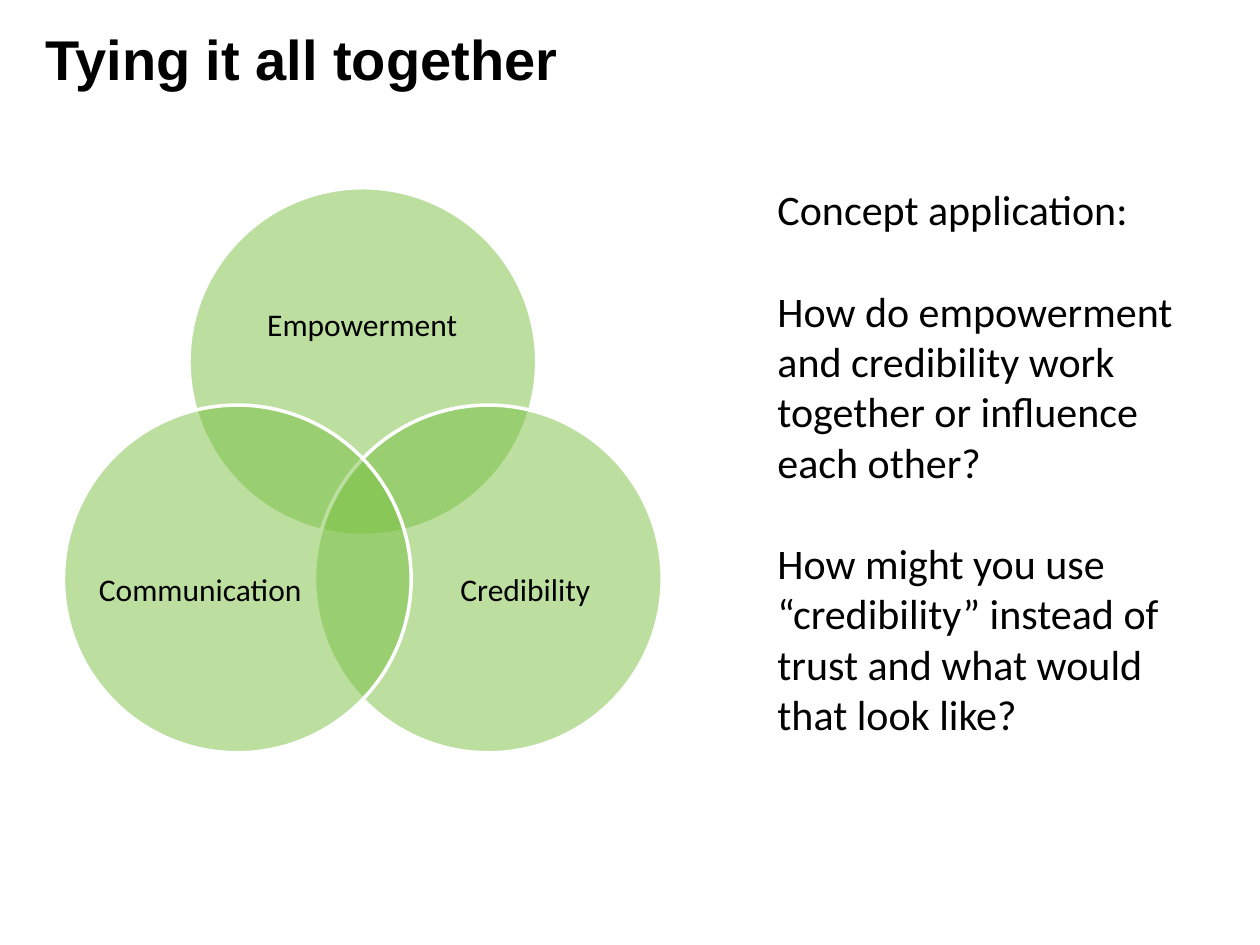
from dataclasses import dataclass
from math import cos, radians, sin

from lxml.etree import SubElement
from pptx import Presentation
from pptx.dml.color import RGBColor
from pptx.enum.shapes import MSO_SHAPE as Shape
from pptx.enum.text import MSO_ANCHOR as Anchor, MSO_AUTO_SIZE as AutoSize, PP_ALIGN as Align
from pptx.oxml.ns import qn
from pptx.util import Inches, Pt


@dataclass(frozen=True)
class Theme:
    ink: str = "000000"
    circle: str = "7AC143"
    outline: str = "FFFFFF"
    opacity: int = 50
    heading_font: str = "Arial"
    body_font: str = "Calibri"
    title_size: int = 32
    body_size: int = 24
    label_size: int = 18


def write(para, text, *, font, size, color, bold=False, align=Align.LEFT, spacing=1.0, before=0):
    para.alignment = align
    para.line_spacing = spacing
    para.space_before = Pt(before)
    span = para.add_run()
    span.text = text
    span.font.name, span.font.size, span.font.bold = font, Pt(size), bold
    span.font.color.rgb = RGBColor.from_string(color)


class SlideBuilder:
    def __init__(self, slide, theme):
        self.slide = slide
        self.theme = theme

    def title(self, text, left, top, width, height):
        box = self.slide.shapes.title
        box.left, box.top, box.width, box.height = map(Inches, (left, top, width, height))
        frame = box.text_frame
        frame.auto_size = AutoSize.NONE
        frame.vertical_anchor = Anchor.MIDDLE
        write(frame.paragraphs[0], text, font=self.theme.heading_font,
              size=self.theme.title_size, color=self.theme.ink, bold=True)

    def circle(self, group, center_x, center_y, diameter):
        radius = diameter / 2
        disc = group.shapes.add_shape(Shape.OVAL, Inches(center_x - radius), Inches(center_y - radius),
                                      Inches(diameter), Inches(diameter))
        disc.shadow.inherit = False
        disc.fill.solid()
        disc.fill.fore_color.rgb = RGBColor.from_string(self.theme.circle)
        color = disc.fill._xPr.find(".//" + qn("a:srgbClr"))
        SubElement(color, qn("a:alpha"), val=str(self.theme.opacity * 1000))
        disc.line.color.rgb = RGBColor.from_string(self.theme.outline)
        disc.line.width = Pt(2)

    def label(self, group, text, left, top, width, height):
        box = group.shapes.add_textbox(*map(Inches, (left, top, width, height)))
        frame = box.text_frame
        frame.word_wrap = True
        frame.vertical_anchor = Anchor.MIDDLE
        frame.margin_left = frame.margin_right = frame.margin_top = frame.margin_bottom = 0
        write(frame.paragraphs[0], text, font=self.theme.body_font, size=self.theme.label_size,
              color=self.theme.ink, align=Align.CENTER, spacing=0.9)

    def venn(self, circles, center_x, center_y, reach, diameter):
        """Spread the circles evenly clockwise from the top; reach is from the middle to each centre."""
        group = self.slide.shapes.add_group_shape()
        for index, (text, label_area) in enumerate(circles):
            angle = radians(360 * index / len(circles) - 90)
            self.circle(group, center_x + reach * cos(angle), center_y + reach * sin(angle), diameter)
            self.label(group, text, *label_area)

    def paragraphs(self, texts, left, top, width, height, indent, gap):
        box = self.slide.shapes.add_textbox(*map(Inches, (left, top, width, height)))
        frame = box.text_frame
        frame.word_wrap = True
        frame.margin_left = Inches(0.1 + indent)
        for index, text in enumerate(texts):
            para = frame.add_paragraph() if index else frame.paragraphs[0]
            write(para, text, font=self.theme.body_font, size=self.theme.body_size,
                  color=self.theme.ink, before=gap if index else 0)


def main():
    deck = Presentation()
    deck.slide_width, deck.slide_height = Inches(10), Inches(7.5)
    title_only = deck.slide_layouts[5]
    page = SlideBuilder(deck.slides.add_slide(title_only), Theme())

    page.title("Tying it all together", 0.26, 0.2, 9.47, 0.52)
    page.venn([
        ("Empowerment", (1.86, 1.97, 2.03, 1.24)),
        ("Credibility", (3.34, 3.93, 1.66, 1.52)),
        ("Communication", (0.76, 3.93, 1.66, 1.52)),
    ], center_x=2.88, center_y=4.02, reach=1.15, diameter=2.76)
    page.paragraphs([
        "Concept application:",
        "How do empowerment and credibility work together or influence each other?",
        "How might you use “credibility” instead of trust and what would that look like?",
    ], 5.57, 1.41, 3.92, 4.85, indent=0.5, gap=29)

    deck.save("out.pptx")


if __name__ == "__main__":
    main()
